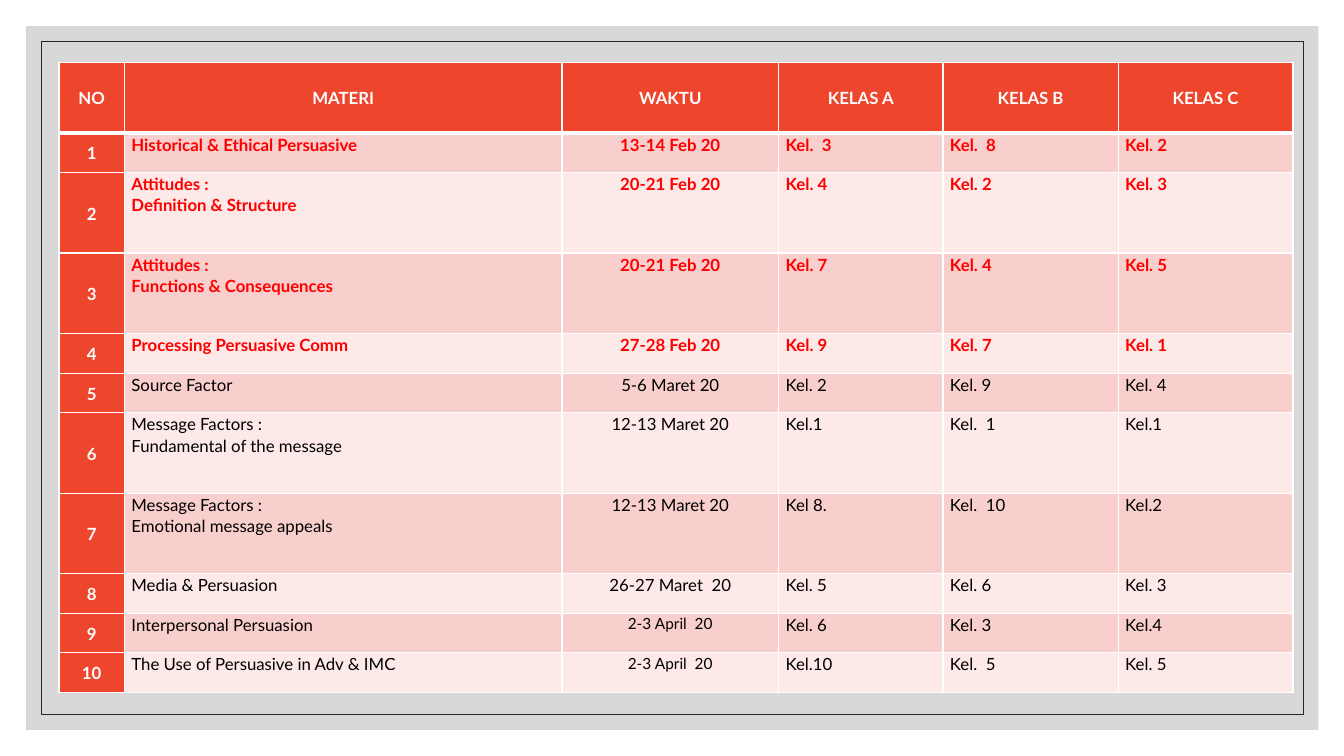
"""Build the class presentation schedule slide."""
import pptx
import pptx.dml.color
import pptx.enum.shapes
import pptx.enum.text
import pptx.oxml
import pptx.oxml.ns
import pptx.util

Pt = pptx.util.Pt
ALIGN = pptx.enum.text.PP_ALIGN
ANCHOR = pptx.enum.text.MSO_ANCHOR

COLORS = {
    "panel": "BFBFBF", "frame": "262626", "header": "EE462D", "white": "FFFFFF",
    "odd": "F8CFCD", "even": "FCE9E8", "done": "FF0000", "planned": "000000",
}
SCHEDULE = [
    ("NO", "MATERI", "WAKTU", "KELAS A", "KELAS B", "KELAS C"),
    ("1", "Historical & Ethical Persuasive", "13-14 Feb 20", "Kel.  3", "Kel.  8", "Kel. 2"),
    ("2", "Attitudes :\nDefinition & Structure", "20-21 Feb 20", "Kel. 4", "Kel. 2", "Kel. 3"),
    ("3", "Attitudes :\nFunctions & Consequences", "20-21 Feb 20", "Kel. 7", "Kel. 4", "Kel. 5"),
    ("4", "Processing Persuasive Comm", "27-28 Feb 20", "Kel. 9", "Kel. 7", "Kel. 1"),
    ("5", "Source Factor", "5-6 Maret 20", "Kel. 2", "Kel. 9", "Kel. 4"),
    ("6", "Message Factors :\nFundamental of the message", "12-13 Maret 20", "Kel.1", "Kel.  1", "Kel.1"),
    ("7", "Message Factors :\nEmotional message appeals", "12-13 Maret 20", "Kel 8.", "Kel.  10", "Kel.2"),
    ("8", "Media & Persuasion", "26-27 Maret  20", "Kel. 5", "Kel. 6", "Kel. 3"),
    ("9", "Interpersonal Persuasion", "2-3 April  20", "Kel. 6", "Kel. 3", "Kel.4"),
    ("10", "The Use of Persuasive in Adv & IMC", "2-3 April  20", "Kel.10", "Kel.  5", "Kel. 5"),
]
COLUMN_WIDTHS = [46.8, 312.5, 154.8, 117.4, 125.2, 124.8]
HEADER_HEIGHT, SINGLE_HEIGHT, DOUBLE_HEIGHT = 50.4, 28.2, 57.6
LAST_DONE_ROW = 4
FIRST_SMALL_DATE_ROW = 9
CELL_FORMAT = {"margin_left": Pt(5), "margin_right": Pt(5), "margin_top": 0, "margin_bottom": 0}


def rgb(name):
    return pptx.dml.color.RGBColor.from_string(COLORS[name])


def add_border(cell, side, width):
    cell._tc.get_or_add_tcPr().append(pptx.oxml.parse_xml(
        f'<a:ln{side} {pptx.oxml.ns.nsdecls("a")} w="{Pt(width)}"><a:solidFill>'
        f'<a:srgbClr val="{COLORS["white"]}"/></a:solidFill></a:ln{side}>'))


presentation = pptx.Presentation()
presentation.slide_width = Pt(960)
presentation.slide_height = Pt(540)
slide = presentation.slides.add_slide(presentation.slide_layouts[6])

RECTANGLE = pptx.enum.shapes.MSO_SHAPE.RECTANGLE
panel = slide.shapes.add_shape(RECTANGLE, Pt(18.7), Pt(18.7), Pt(923), Pt(502.6))
panel.shadow.inherit = False
panel.fill.solid()
panel.fill.fore_color.rgb = rgb("panel")
panel.line.fill.background()
panel_color = panel._element.spPr.find(".//" + pptx.oxml.ns.qn("a:srgbClr"))
panel_color.append(pptx.oxml.parse_xml(f'<a:alpha {pptx.oxml.ns.nsdecls("a")} val="60000"/>'))

frame = slide.shapes.add_shape(RECTANGLE, Pt(29.5), Pt(29.5), Pt(901.4), Pt(481))
frame.shadow.inherit = False
frame.fill.background()
frame.line.color.rgb = rgb("frame")
frame.line.width = Pt(0.5)

row_heights = [HEADER_HEIGHT] + [
    DOUBLE_HEIGHT if "\n" in entry[1] else SINGLE_HEIGHT for entry in SCHEDULE[1:]]
table = slide.shapes.add_table(
    len(SCHEDULE), len(COLUMN_WIDTHS), Pt(42.1), Pt(44.6),
    Pt(sum(COLUMN_WIDTHS)), Pt(sum(row_heights))).table
for column, width in zip(table.columns, COLUMN_WIDTHS):
    column.width = Pt(width)
for row, height in zip(table.rows, row_heights):
    row.height = Pt(height)

for row_index, entry in enumerate(SCHEDULE):
    for column_index, text in enumerate(entry):
        cell = table.cell(row_index, column_index)
        is_heading = row_index == 0 or column_index == 0
        is_done = row_index <= LAST_DONE_ROW
        is_small = row_index >= FIRST_SMALL_DATE_ROW and column_index == 2
        for name, value in CELL_FORMAT.items():
            setattr(cell, name, value)
        cell.vertical_anchor = ANCHOR.MIDDLE if is_heading else ANCHOR.TOP
        border_widths = {"L": 1, "R": 1, "T": 3 if row_index == 1 else 1, "B": 3 if row_index == 0 else 1}
        for side, width in border_widths.items():
            add_border(cell, side, width)
        cell.fill.solid()
        cell.fill.fore_color.rgb = rgb("header" if is_heading else "odd" if row_index % 2 else "even")
        cell.text = text
        font_format = {"name": "Lato", "size": Pt(11 if is_small else 12), "bold": is_heading or is_done}
        for paragraph in cell.text_frame.paragraphs:
            paragraph.alignment = ALIGN.CENTER if is_heading or column_index == 2 else ALIGN.JUSTIFY
            paragraph.line_spacing = 1.07
            font = paragraph.runs[0].font
            for name, value in font_format.items():
                setattr(font, name, value)
            font.color.rgb = rgb("white" if is_heading else "done" if is_done else "planned")

presentation.save("out.pptx")
